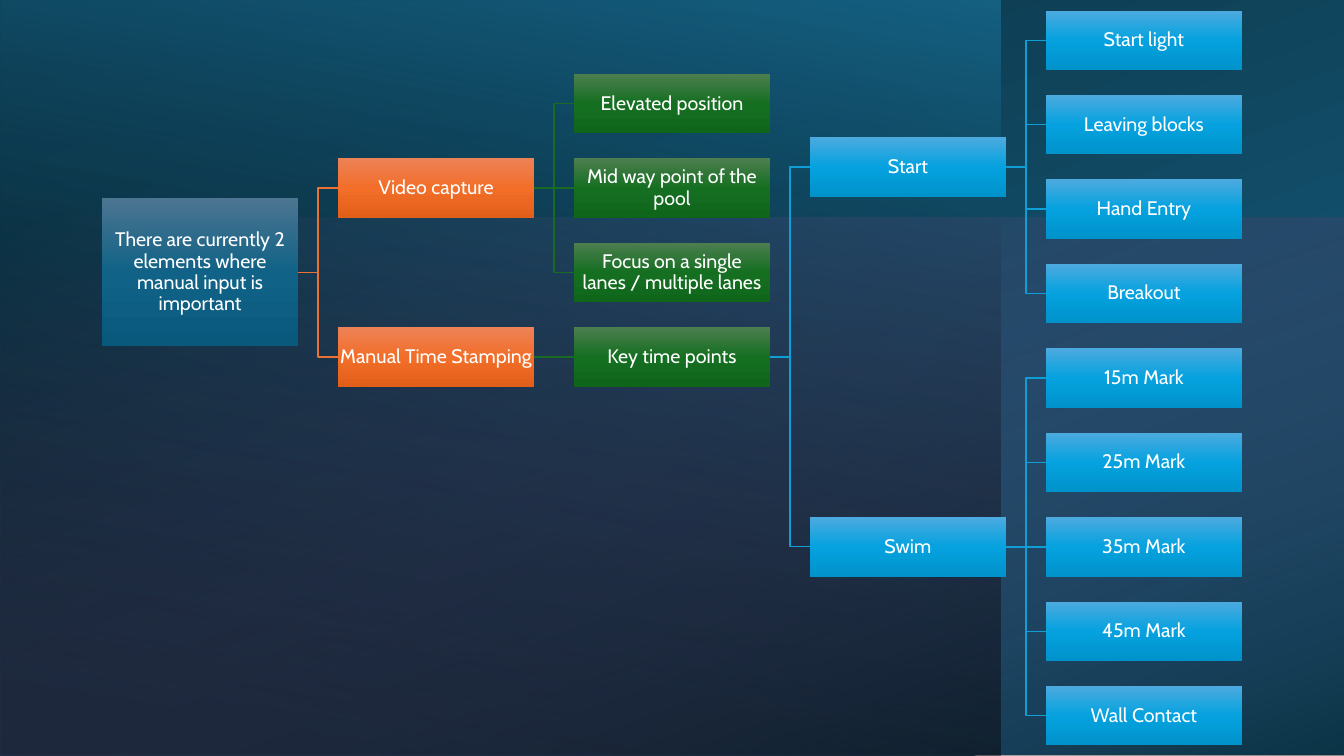
from dataclasses import dataclass
from lxml.etree import SubElement as Sub
from pptx import Presentation
from pptx.dml.color import RGBColor as Rgb
from pptx.enum.shapes import MSO_CONNECTOR as Link, MSO_SHAPE as Kind
from pptx.enum.text import MSO_ANCHOR as Anchor, PP_ALIGN as Align
from pptx.oxml.ns import qn
from pptx.util import Inches, Pt


@dataclass(frozen=True)
class Theme:
    font: str = "Cabin"
    size: int = 14
    text: str = "FFFFFF"
    fills: tuple = (
        ("4C7591", "106287", "09597D"),
        ("ED8257", "F26E29", "E25F1A"),
        ("4D7E50", "156F21", "0F661B"),
        ("4CAADF", "05A2DF", "0092CB"),
        ("4CAADF", "05A2DF", "0092CB"),
    )
    lines: tuple = (None, "E97132", "196B24", "0F9ED5", "0F9ED5")
    back: tuple = (
        ((8, "156082", 100), (100, "0B3041", 100)),
        ((8, "000000", 52), (100, "156082", 100)),
        ((0, "D86ECC", 0), (100, "000000", 46)),
    )


THEME = Theme()

PANES = [
    (2.92, -2.92, 7.5, 13.33, 270, 200),
    (0, 0, 9.92, 7.5, 180, 80),
    (3.99, -1.84, 5.35, 13.34, 270, 20),
]

START = ("Start", [
    ("Start light", 0),
    ("Leaving blocks", 1),
    ("Hand Entry", 2),
    ("Breakout", 3),
])
SWIM = ("Swim", [
    ("15m Mark", 4),
    ("25m Mark", 5),
    ("35m Mark", 6),
    ("45m Mark", 7),
    ("Wall Contact", 8),
])
VIDEO = ("Video capture", [
    ("Elevated position", 0.75),
    ("Mid way point of the pool", 1.75),
    ("Focus on a single lanes / multiple lanes", 2.75),
])
STAMP = ("Manual Time Stamping", [("Key time points", [START, SWIM])])
TREE = ("There are currently 2 elements where manual input is important",
        [VIDEO, STAMP])

LEFT, STEP = 1.01, 2.34
TOP, END, LAST = 0.4, 7.1, 8
WIDE, HIGH, TALL = 1.95, 0.59, 1.47


def shade(shape, stops, angle):
    props = shape._element.spPr
    grad = Sub(props, qn("a:gradFill"), rotWithShape="1")
    items = Sub(grad, qn("a:gsLst"))
    for place, color, alpha in stops:
        stop = Sub(items, qn("a:gs"), pos=str(place * 1000))
        tint = Sub(stop, qn("a:srgbClr"), val=color)
        if alpha < 100:
            Sub(tint, qn("a:alpha"), val=str(alpha * 1000))
    Sub(grad, qn("a:lin"), ang=str(angle * 60000), scaled="0")
    shape.line.fill.background()
    shape.shadow.inherit = False


def add_pane(slide, pane, stops):
    *area, turn, angle = pane
    shape = slide.shapes.add_shape(Kind.RECTANGLE, *map(Inches, area))
    shape.rotation = turn
    shape._element.spPr.xfrm.set("flipH", "1")
    shade(shape, stops, angle)


def add_box(slide, text, level, row):
    high = HIGH if level else TALL
    mid = TOP + row * (END - TOP) / LAST
    area = (LEFT + level * STEP, mid - high / 2, WIDE, high)
    box = slide.shapes.add_shape(Kind.RECTANGLE, *map(Inches, area))
    shade(box, [(place, color, 100) for place, color
                in zip((0, 50, 100), THEME.fills[level])], 90)
    frame = box.text_frame
    frame.text = text
    frame.word_wrap = True
    frame.vertical_anchor = Anchor.MIDDLE
    frame.margin_left = frame.margin_right = Inches(0.01)
    frame.margin_top = frame.margin_bottom = Inches(0.01)
    para = frame.paragraphs[0]
    para.alignment = Align.CENTER
    para.line_spacing = 0.9
    font = para.runs[0].font
    font.name = THEME.font
    font.size = Pt(THEME.size)
    font.color.rgb = Rgb.from_string(THEME.text)
    return box


def add_link(slide, box, kid, level, flat):
    kind = Link.STRAIGHT if flat else Link.ELBOW
    link = slide.shapes.add_connector(kind, 0, 0, 0, 0)
    link.begin_connect(box, 3)
    link.end_connect(kid, 1)
    link.line.width = Pt(1)
    link.line.color.rgb = Rgb.from_string(THEME.lines[level])
    Sub(link._element.spPr, qn("a:effectLst"))


def find_row(node):
    kids = node[1]
    if not isinstance(kids, list):
        return kids
    return (find_row(kids[0]) + find_row(kids[-1])) / 2


def grow(slide, node, level=0):
    text, kids = node
    row = find_row(node)
    box = add_box(slide, text, level, row)
    if isinstance(kids, list):
        for kid in kids:
            child = grow(slide, kid, level + 1)
            add_link(slide, box, child, level + 1, find_row(kid) == row)
    return box


def main():
    deck = Presentation()
    deck.slide_width, deck.slide_height = Inches(13.33), Inches(7.5)
    slide = deck.slides.add_slide(deck.slide_layouts[6])
    for pane, stops in zip(PANES, THEME.back):
        add_pane(slide, pane, stops)
    grow(slide, TREE)
    deck.save("out.pptx")


if __name__ == "__main__":
    main()
